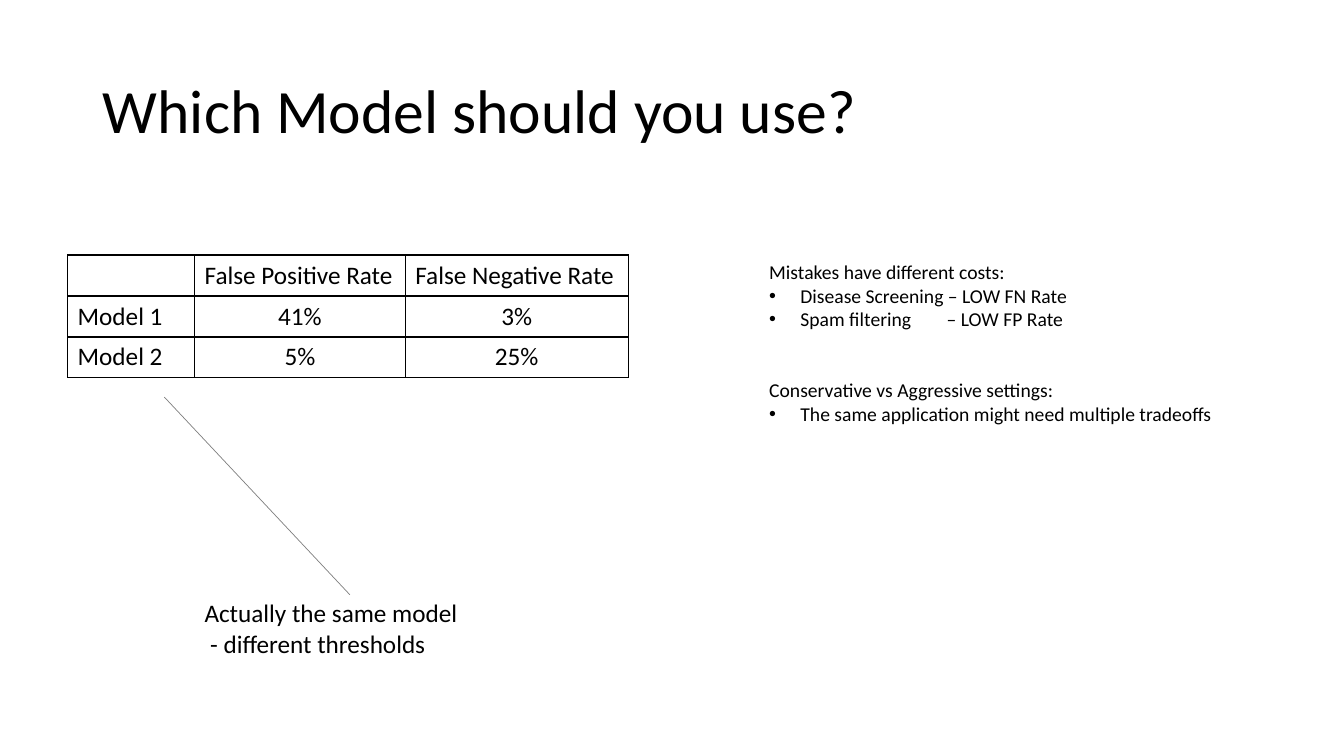
from lxml.etree import SubElement
from pptx import Presentation
from pptx.dml.color import RGBColor
from pptx.enum.shapes import MSO_CONNECTOR
from pptx.enum.text import MSO_ANCHOR, MSO_AUTO_SIZE, PP_ALIGN
from pptx.oxml.ns import qn
from pptx.util import Emu, Inches, Pt


def rgb(hex_text):
    return RGBColor.from_string(hex_text)


def apply(target, formats):
    for name, value in formats.items():
        setattr(target, name, value)


class Page:
    """Style and current slide; places are percentages of the slide's size."""
    FONT, INK, RULE = "Calibri", "000000", "808080"
    BULLET_INDENT = Inches(0.31)

    def __init__(self, deck):
        self.deck = deck
        self.slide = deck.slides.add_slide(deck.slide_layouts[1])

    def x(self, share):
        return Emu(round(self.deck.slide_width * share / 100))

    def y(self, share):
        return Emu(round(self.deck.slide_height * share / 100))

    def box(self, left, top, width, height):
        return dict(left=self.x(left), top=self.y(top),
                    width=self.x(width), height=self.y(height))

    def add_text(self, paragraph, text, size, **formats):
        apply(paragraph, formats)
        run = paragraph.add_run()
        run.text = text
        apply(run.font, dict(name=self.FONT, size=Pt(size), bold=False))
        run.font.color.rgb = rgb(self.INK)
        return run

    def lines(self, frame, count):
        for _ in range(count - 1):
            frame.add_paragraph()
        return frame.paragraphs

    def title(self, text, place):
        heading = self.slide.shapes.title
        apply(heading, self.box(*place))
        apply(heading.text_frame, dict(vertical_anchor=MSO_ANCHOR.MIDDLE,
                                       auto_size=MSO_AUTO_SIZE.NONE))
        self.add_text(heading.text_frame.paragraphs[0], text, 44,
                      alignment=PP_ALIGN.LEFT, line_spacing=0.9)

    def bullet(self, paragraph, shown):
        props = paragraph._p.get_or_add_pPr()
        indent = self.BULLET_INDENT if shown else 0
        props.set("marL", str(indent))
        props.set("indent", str(-indent))
        if shown:
            SubElement(props, qn("a:buFont")).set("typeface", "Arial")
            SubElement(props, qn("a:buChar")).set("char", "•")
        else:
            SubElement(props, qn("a:buNone"))

    def topics(self, groups, place, size, gap):
        body = self.slide.placeholders[1]
        apply(body, self.box(*place))
        apply(body.text_frame, dict(word_wrap=False, vertical_anchor=MSO_ANCHOR.TOP,
                                    auto_size=MSO_AUTO_SIZE.SHAPE_TO_FIT_TEXT))
        entries = [(group, row, parts) for group, rows in enumerate(groups)
                   for row, parts in enumerate(rows)]
        paragraphs = self.lines(body.text_frame, len(entries))
        for paragraph, (group, row, parts) in zip(paragraphs, entries):
            before = gap if group and not row else 0
            for text, tracking in parts:
                run = self.add_text(paragraph, text, size, space_before=Pt(before))
                if tracking:
                    run.font._element.set("spc", str(tracking * 100))
            self.bullet(paragraph, row > 0)

    def note(self, texts, place, size):
        frame = self.slide.shapes.add_textbox(**self.box(*place)).text_frame
        apply(frame, dict(word_wrap=True, auto_size=MSO_AUTO_SIZE.SHAPE_TO_FIT_TEXT))
        for paragraph, text in zip(self.lines(frame, len(texts)), texts):
            self.add_text(paragraph, text, size)

    def border(self, cell):
        props = cell._tc.get_or_add_tcPr()
        for side in ("lnL", "lnR", "lnT", "lnB"):
            edge = SubElement(props, qn(f"a:{side}"), w=str(Pt(1)))
            fill = SubElement(edge, qn("a:solidFill"))
            SubElement(fill, qn("a:srgbClr"), val=self.INK)

    def table(self, rows, left, top, widths, row_height, size):
        place = self.box(left, top, sum(widths), row_height * len(rows))
        grid = self.slide.shapes.add_table(len(rows), len(widths), **place).table
        apply(grid, dict(first_row=False, horz_banding=False))
        for column, width in zip(grid.columns, widths):
            column.width = self.x(width)
        for r, values in enumerate(rows):
            grid.rows[r].height = self.y(row_height)
            for c, value in enumerate(values):
                cell = grid.cell(r, c)
                self.border(cell)
                cell.fill.background()
                if value:
                    align = PP_ALIGN.CENTER if r and c else PP_ALIGN.LEFT
                    self.add_text(cell.text_frame.paragraphs[0], value, size,
                                  alignment=align)

    def line(self, start, end):
        link = self.slide.shapes.add_connector(
            MSO_CONNECTOR.STRAIGHT, self.x(start[0]), self.y(start[1]),
            self.x(end[0]), self.y(end[1]))
        link.line.color.rgb = rgb(self.RULE)
        link.line.width = Pt(0.5)
        SubElement(link._element.spPr, qn("a:effectLst"))


def main():
    deck = Presentation()
    apply(deck, dict(slide_width=Inches(13.33), slide_height=Inches(7.5)))
    page = Page(deck)

    page.title("Which Model should you use?", (6.9, 5.33, 86.25, 19.33))

    # Error rates of both models
    error_rates = [("", "False Positive Rate", "False Negative Rate"),
                   ("Model 1", "41%", "3%"),
                   ("Model 2", "5%", "25%")]
    page.table(error_rates, 5.03, 33.73, (9.45, 15.68, 16.58), 5.42, size=18)

    # Considerations: each part is a text and its extra letter spacing in points
    costs = [[("Mistakes have different costs:", 0)],
             [("Disease Screening – LOW FN Rate", 0)],
             [("Spam filtering", 0), (" ", 22), ("– LOW FP Rate", 0)]]
    settings = [[("Conservative vs Aggressive settings:", 0)],
                [("The same application might need multiple tradeoffs", 0)]]
    page.topics([costs, settings], (56.48, 33.73, 34.8, 26.53), size=14, gap=34)

    # Remark and its pointer to the table
    page.note(["Actually the same model", " - different thresholds"],
              (14.48, 78.4, 22.43, 9.47), size=18)
    page.line((26.03, 78.67), (12.23, 52.53))

    deck.save("out.pptx")


if __name__ == "__main__":
    main()
